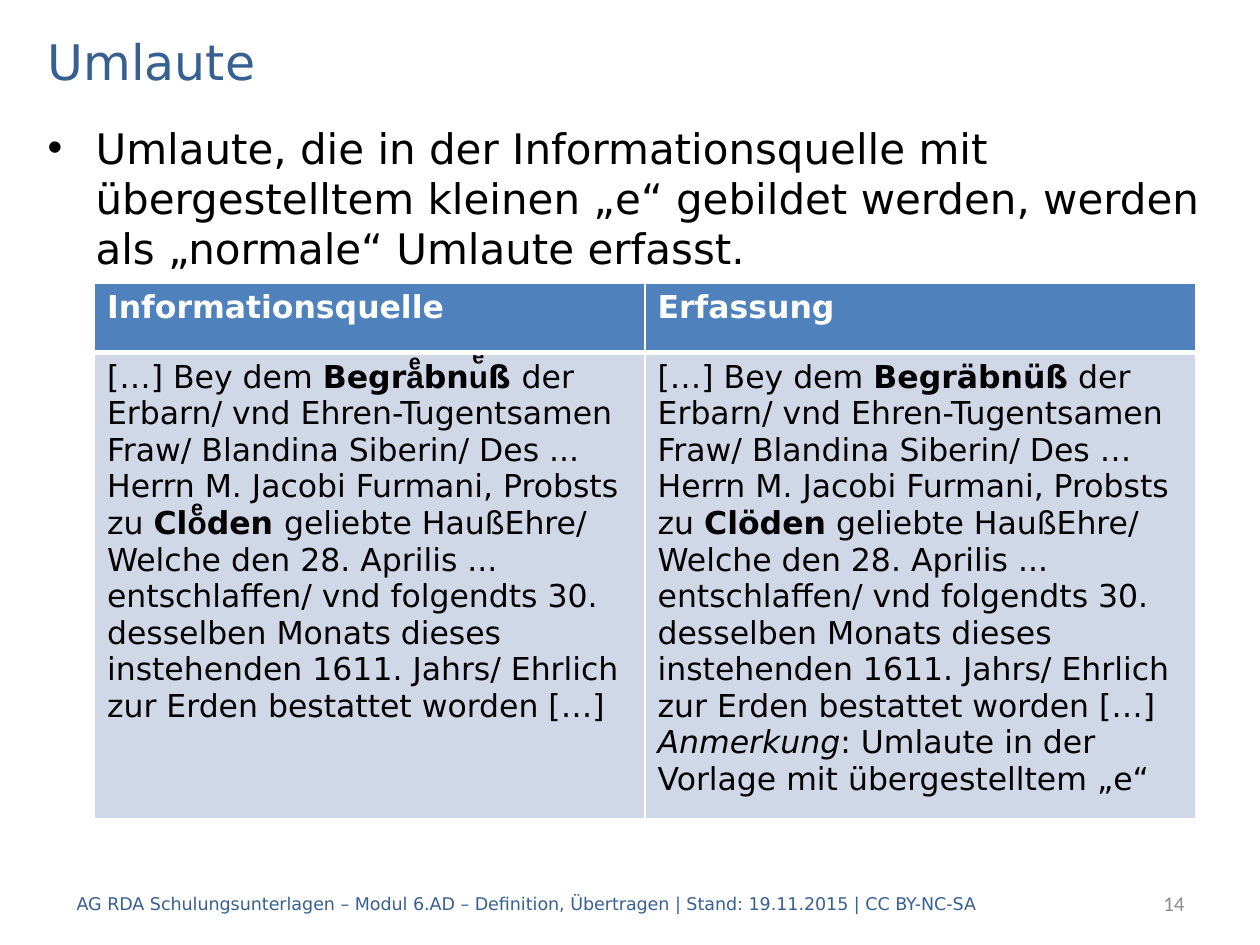
from lxml.etree import SubElement
from pptx import Presentation
from pptx.dml.color import RGBColor
from pptx.enum.text import MSO_ANCHOR, PP_ALIGN
from pptx.oxml.ns import qn
from pptx.util import Inches, Pt

# Content: a text is a list of paragraphs, a paragraph a list of (words, style)
TITLE = [[("Umlaute", "title")]]
RULE = [[("Umlaute, die in der Informationsquelle mit übergestelltem kleinen „e“ "
          "gebildet werden, werden als „normale“ Umlaute erfasst.", "body")]]
FOOTER = [[("AG RDA Schulungsunterlagen – Modul 6.AD – Definition, Übertragen | "
            "Stand: 19.11.2015 | CC BY-NC-SA", "footer")]]
NUMBER = [[("14", "number")]]

OPENING = ("[…] Bey dem ", "cell")
NAMES = "der Erbarn/ vnd Ehren-Tugentsamen Fraw/ Blandina Siberin/ Des {} Herrn M. Jacobi Furmani, Probsts zu "
ENDING = ("geliebte HaußEhre/ Welche den 28. Aprilis ... entschlaffen/ vnd folgendts 30. "
          "desselben Monats dieses instehenden 1611. Jahrs/ Ehrlich zur Erden bestattet worden […]")
SOURCE = [[OPENING, ("Begr", "strong"), ("aͤ", "umlaut"), ("bn", "strong"), ("uͤ", "umlaut"),
           ("ß ", "strong"), (NAMES.format("..."), "cell"), ("Cl", "strong"), ("oͤ", "umlaut"),
           ("den ", "strong"), (ENDING, "cell")]]
RECORDED = [[OPENING, ("Begräbnüß", "strong"), (" " + NAMES.format("…"), "cell"),
             ("Clöden", "strong"), (" " + ENDING, "cell")],
            [("Anmerkung", "note"), (": Umlaute in der Vorlage mit übergestelltem „e“", "cell")]]
ROWS = [[[[("Informationsquelle", "head")]], [[("Erfassung", "head")]]],
        [SOURCE, RECORDED]]

# Theme: name, size, colour, bold, italic
SANS = "DejaVu Sans"
THEME = {
    "title": (SANS, 28, "376092", False, False),
    "body": (SANS, 24, "000000", False, False),
    "footer": (SANS, 10, "376092", False, False),
    "number": ("Calibri", 12, "8C8C8C", False, False),
    "head": (SANS, 18, "FFFFFF", True, False),
    "cell": (SANS, 18, "000000", False, False),
    "strong": (SANS, 18, "000000", True, False),
    "umlaut": ("Arial", 18, "000000", True, False),
    "note": (SANS, 18, "000000", False, True),
    "row fills": ("4F81BD", "D0D8E8"),
    "border": "FFFFFF",
}
ROW_HEIGHTS = (0.55, 3.57)
THIN, THICK = 1, 3


def write(frame, paragraphs, align=PP_ALIGN.LEFT):
    for index, pieces in enumerate(paragraphs):
        para = frame.add_paragraph() if index else frame.paragraphs[0]
        para.alignment = align
        for words, style in pieces:
            span = para.add_run()
            span.text = words
            name, size, colour, bold, italic = THEME[style]
            values = {"name": name, "size": Pt(size), "bold": bold, "italic": italic}
            for key, value in values.items():
                setattr(span.font, key, value)
            span.font.color.rgb = RGBColor.from_string(colour)


def place(shape, left, top, width, height):
    for key, value in zip(("left", "top", "width", "height"), (left, top, width, height)):
        setattr(shape, key, Inches(value))


def add_text(page, area, paragraphs, anchor=MSO_ANCHOR.MIDDLE, align=PP_ALIGN.LEFT):
    box = page.shapes.add_textbox(*map(Inches, area))
    box.text_frame.word_wrap = True
    box.text_frame.vertical_anchor = anchor
    write(box.text_frame, paragraphs, align)
    return box


def set_bullet(para, indent):
    para.space_before = Pt(4.8)
    properties = para._p.get_or_add_pPr()
    properties.set("marL", str(Inches(indent)))
    properties.set("indent", str(-Inches(indent)))
    SubElement(properties, qn("a:buFont"), typeface="Arial")
    SubElement(properties, qn("a:buChar"), char="•")


def set_borders(cell, widths):
    properties = cell._tc.get_or_add_tcPr()
    for side, width in widths.items():
        line = SubElement(properties, qn("a:ln" + side), w=str(Pt(width)))
        fill = SubElement(line, qn("a:solidFill"))
        SubElement(fill, qn("a:srgbClr"), val=THEME["border"])


def add_table(page, left, top, width):
    frame = page.shapes.add_table(len(ROWS), len(ROWS[0]), Inches(left), Inches(top),
                                  Inches(width), Inches(sum(ROW_HEIGHTS)))
    table = frame.table
    for row_index, row in enumerate(ROWS):
        table.rows[row_index].height = Inches(ROW_HEIGHTS[row_index])
        is_head = row_index == 0
        borders = {"L": THIN, "R": THIN, "T": THIN if is_head else THICK,
                   "B": THICK if is_head else THIN}
        for column_index, paragraphs in enumerate(row):
            cell = table.cell(row_index, column_index)
            set_borders(cell, borders)
            cell.fill.solid()
            cell.fill.fore_color.rgb = RGBColor.from_string(THEME["row fills"][row_index])
            write(cell.text_frame, paragraphs)


def main():
    deck = Presentation()
    deck.slide_width, deck.slide_height = Inches(10), Inches(7.5)
    page = deck.slides.add_slide(deck.slide_layouts[5])

    # Title
    title = page.shapes.title
    place(title, 0.28, 0.2, 9.45, 0.56)
    title.text_frame.vertical_anchor = MSO_ANCHOR.MIDDLE
    write(title.text_frame, TITLE)

    # Rule with bullet
    rule = add_text(page, (0.28, 0.92, 9.45, 5.98), RULE, MSO_ANCHOR.TOP)
    set_bullet(rule.text_frame.paragraphs[0], 0.38)

    # Footer and page number
    add_text(page, (0.51, 6.97, 8.27, 0.4), FOOTER)
    add_text(page, (7.91, 6.97, 1.59, 0.4), NUMBER, align=PP_ALIGN.RIGHT)

    # Comparison of source and record
    add_table(page, 0.75, 2.25, 8.74)
    deck.save("out.pptx")


if __name__ == "__main__":
    main()
